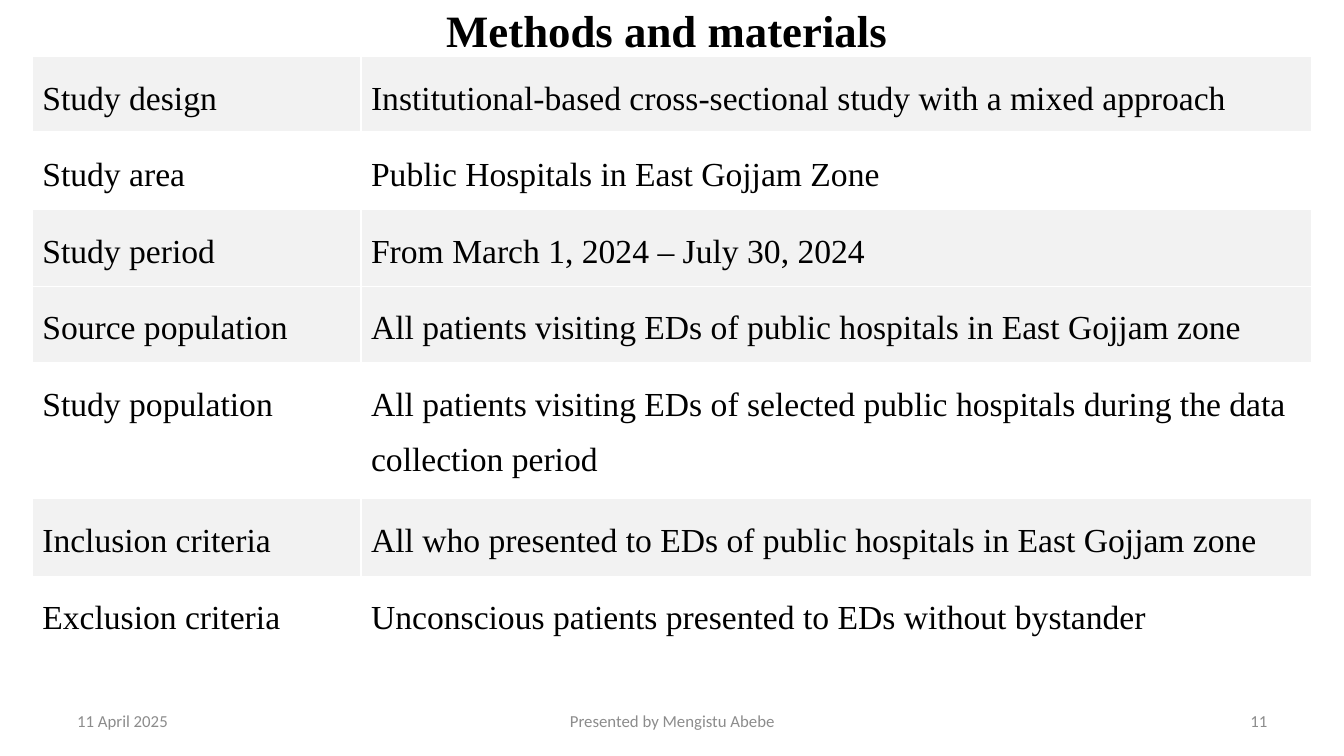
"""Build the methods and materials slide with its study table."""
from lxml import etree
from pptx import Presentation
from pptx import util as u
from pptx.dml.color import RGBColor
from pptx.enum import text as t
from pptx.oxml.ns import qn

HUES = {"ink": "000000", "band": "F2F2F2", "plain": "FFFFFF", "foot": "8C8C8C"}
SERIF, SANS = "Times New Roman", "Calibri"
LEFT, MID, RIGHT = t.PP_ALIGN.LEFT, t.PP_ALIGN.CENTER, t.PP_ALIGN.RIGHT

ROWS = [
    ("Study design", "Institutional-based cross-sectional study with a mixed approach", 10.13, "band"),
    ("Study area", "Public Hospitals in East Gojjam Zone", 10.13, "plain"),
    ("Study period", "From March 1, 2024 – July 30, 2024", 10.13, "band"),
    ("Source population", "All patients visiting EDs of public hospitals in East Gojjam zone", 10.13, "band"),
    ("Study population", "All patients visiting EDs of selected public hospitals during the data "
     "collection period", 18, "plain"),
    ("Inclusion criteria", "All who presented to EDs of public hospitals in East Gojjam zone", 10.27, "band"),
    ("Exclusion criteria", "Unconscious patients presented to EDs without bystander", 18.93, "plain"),
]
FOOT = [
    ("11 April 2025", 5, 23.33, LEFT),
    ("Presented by Mengistu Abebe", 34.2, 31.66, MID),
    ("11", 71.7, 23.33, RIGHT),
]


class Deck:
    def __init__(self):
        self.prs = Presentation()
        self.prs.slide_width, self.prs.slide_height = u.Inches(13.33), u.Inches(7.5)
        self.slide = self.prs.slides.add_slide(self.prs.slide_layouts[5])

    def wide(self, share):
        return round(self.prs.slide_width * share / 100)

    def high(self, share):
        return round(self.prs.slide_height * share / 100)

    def box(self, x, y, w, h):
        return self.wide(x), self.high(y), self.wide(w), self.high(h)

    def letter(self, frame, words, font, size, hue, align=LEFT, bold=False, space=1.0):
        frame.text = words
        frame.word_wrap = True
        para = frame.paragraphs[0]
        para.alignment, para.line_spacing = align, space
        face = para.runs[0].font
        face.name, face.size, face.bold = font, u.Pt(size), bold
        face.color.rgb = RGBColor.from_string(HUES[hue])

    def title(self, words, *place):
        head = self.slide.shapes.title
        head.left, head.top, head.width, head.height = self.box(*place)
        self.letter(head.text_frame, words, SERIF, 32, "ink", MID, True)
        head.text_frame.auto_size = t.MSO_AUTO_SIZE.NONE
        head.text_frame.vertical_anchor = t.MSO_ANCHOR.MIDDLE

    def label(self, words, align, *place):
        frame = self.slide.shapes.add_textbox(*self.box(*place)).text_frame
        self.letter(frame, words, SANS, 12, "foot", align)
        frame.vertical_anchor = t.MSO_ANCHOR.MIDDLE

    def edge(self, cell, side, width):
        line = etree.SubElement(cell._tc.get_or_add_tcPr(), qn("a:ln" + side), w=str(u.Pt(width)))
        fill = etree.SubElement(line, qn("a:solidFill"))
        etree.SubElement(fill, qn("a:srgbClr"), val=HUES["plain"])

    def table(self, rows, x, y, cols):
        place = self.box(x, y, sum(cols), sum(row[2] for row in rows))
        grid = self.slide.shapes.add_table(len(rows), len(cols), *place).table
        grid.first_row = grid.horz_banding = False
        for col, share in zip(grid.columns, cols):
            col.width = self.wide(share)
        for i, (name, value, tall, hue) in enumerate(rows):
            grid.rows[i].height = self.high(tall)
            for j, words in enumerate((name, value)):
                cell = grid.cell(i, j)
                self.letter(cell.text_frame, words, SERIF, 24, "ink", space=1.5)
                for side in "LRTB":
                    self.edge(cell, side, 3 if i == 0 and side == "B" else 1)
                cell.fill.solid()
                cell.fill.fore_color.rgb = RGBColor.from_string(HUES[hue])


def main():
    deck = Deck()
    deck.title("Methods and materials ", 16.28, 0, 67.5, 7.73)
    deck.table(ROWS, 2.4, 7.47, (24.46, 70.74))
    for words, x, w, align in FOOT:
        deck.label(words, align, x, 92.67, w, 5.33)
    deck.prs.save("out.pptx")


if __name__ == "__main__":
    main()
